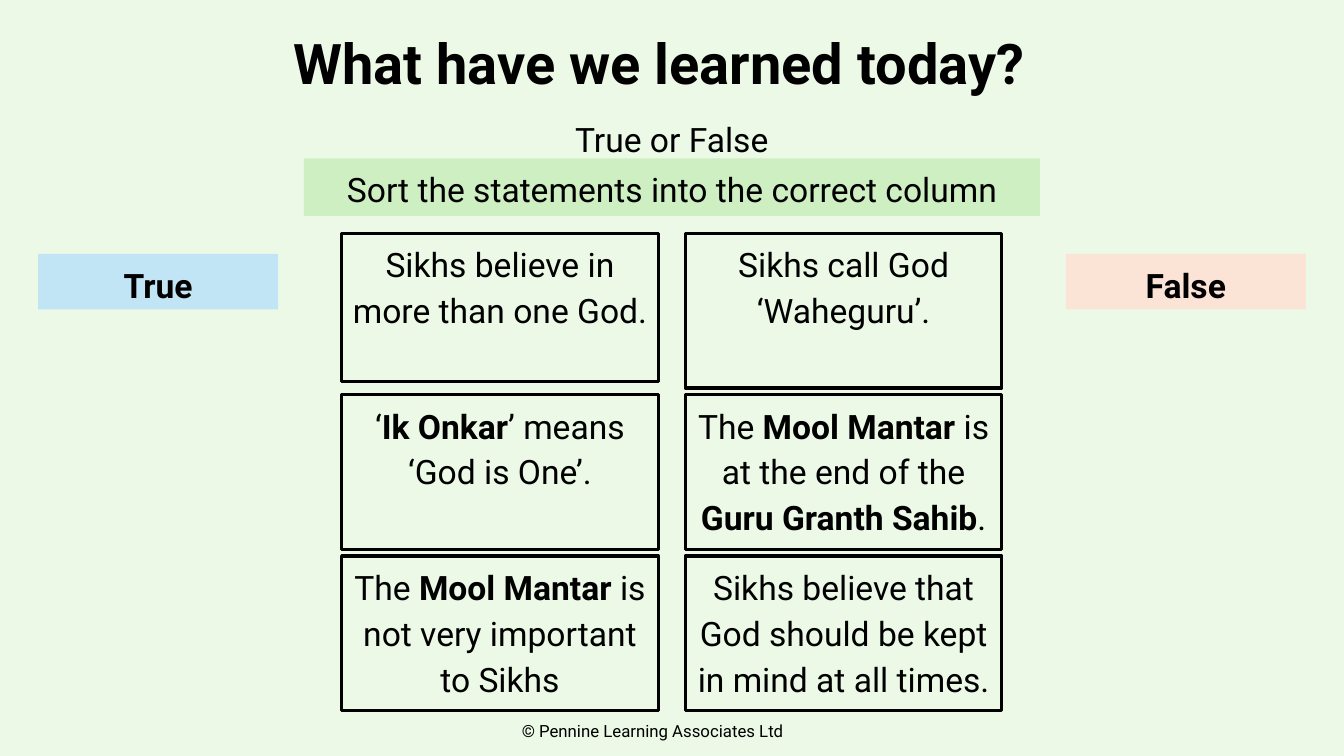
from pptx import Presentation
from pptx import util as u
from pptx.dml import color
from pptx.enum import shapes, text

FONT = "Roboto"
BLACK = "000000"
CARD_LEFT, CARD_TOP = 8.61, 5.89
CARD_WIDTH, CARD_HEIGHT = 7.98, 3.89
COLUMN_STEP, ROW_STEP = 8.66, 4.06
STATEMENTS = [
    ["Sikhs believe in more than one God.", "Sikhs call God ‘Waheguru’."],
    ["‘**Ik Onkar**’ means ‘God is One’.",
     "The **Mool Mantar **is at the end of the **Guru Granth Sahib**."],
    ["The **Mool Mantar **is not very important to Sikhs",
     "Sikhs believe that God should be kept in mind at all times."],
]


def rgb(value):
    return color.RGBColor.from_string(value)


def place(box, left, top, width, height):
    box.left, box.top = u.Cm(left), u.Cm(top)
    box.width, box.height = u.Cm(width), u.Cm(height)


def write(box, words, size=24, align=text.PP_ALIGN.CENTER, spacing=1.14,
          anchor=text.MSO_ANCHOR.TOP):
    """Fill a box with one paragraph; ** switches bold on and off."""
    frame = box.text_frame
    frame.word_wrap = True
    frame.auto_size = text.MSO_AUTO_SIZE.NONE
    frame.vertical_anchor = anchor
    para = frame.paragraphs[0]
    para.alignment = align
    para.line_spacing = spacing
    for index, part in enumerate(words.split("**")):
        if part:
            span = para.add_run()
            span.text = part
            span.font.name = FONT
            span.font.size = u.Pt(size)
            span.font.bold = index % 2 == 1
            span.font.color.rgb = rgb(BLACK)


def add_label(page, words, left, top, width, height, **style):
    box = page.shapes.add_textbox(0, 0, 0, 0)
    place(box, left, top, width, height)
    write(box, words, **style)


def add_panel(page, words, left, top, width, height, fill=None, line=None):
    box = page.shapes.add_shape(shapes.MSO_SHAPE.RECTANGLE, 0, 0, 0, 0)
    place(box, left, top, width, height)
    box.shadow.inherit = False
    if fill:
        box.fill.solid()
        box.fill.fore_color.rgb = rgb(fill)
    else:
        box.fill.background()
    if line:
        box.line.color.rgb = rgb(line)
        box.line.width = u.Pt(2.25)
    else:
        box.line.fill.background()
    write(box, words)


def add_statements(page):
    for row, statements in enumerate(STATEMENTS):
        for column, words in enumerate(statements):
            height = 3.73 if row == column == 0 else CARD_HEIGHT
            add_panel(page, words, CARD_LEFT + column * COLUMN_STEP,
                      CARD_TOP + row * ROW_STEP, CARD_WIDTH, height, line=BLACK)


def main():
    deck = Presentation()
    deck.slide_width, deck.slide_height = u.Cm(33.87), u.Cm(19.05)
    page = deck.slides.add_slide(deck.slide_layouts[5])
    page.background.fill.solid()
    page.background.fill.fore_color.rgb = rgb("ECF9E7")

    title = page.shapes.title
    place(title, -0.33, -0.18, 33.87, 3.68)
    write(title, "**What have we learned today?**", size=40, spacing=0.9,
          anchor=text.MSO_ANCHOR.MIDDLE)

    add_label(page, "True or False", 13.58, 2.72, 6.7, 1.45)
    add_panel(page, "**True**", 0.96, 6.4, 6.05, 1.4, fill="C1E5F5")
    add_panel(page, "Sort the statements into the correct column",
              7.66, 3.99, 18.55, 1.45, fill="CEEFC1")
    add_panel(page, "**False**", 26.86, 6.4, 6.05, 1.4, fill="FBE3D6")
    add_statements(page)
    add_label(page, "© Pennine Learning Associates Ltd", 12.9, 18.03, 8.08, 0.76,
              size=12, align=text.PP_ALIGN.LEFT, spacing=1.0)
    deck.save("out.pptx")


if __name__ == "__main__":
    main()
